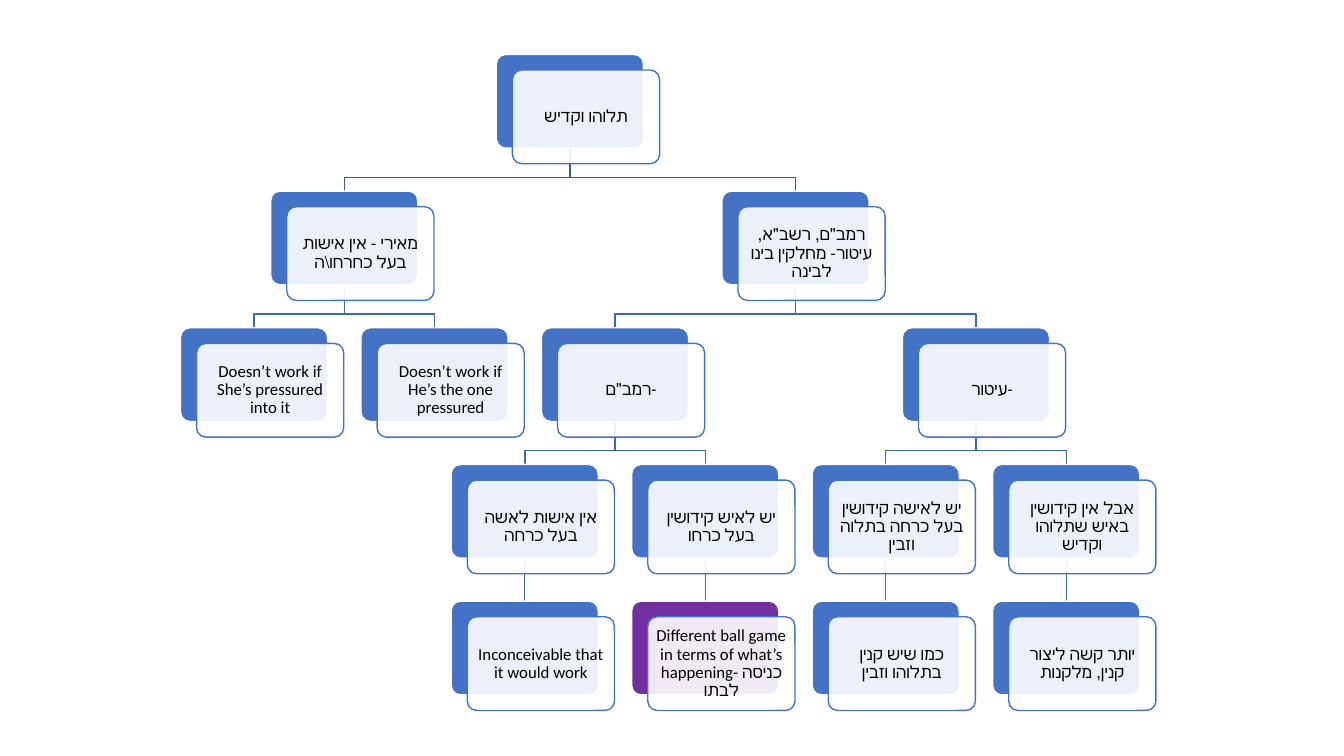
from dataclasses import dataclass

from lxml import etree
from pptx import Presentation
from pptx.dml.color import RGBColor
from pptx.enum.shapes import MSO_CONNECTOR, MSO_SHAPE
from pptx.enum.text import MSO_ANCHOR, PP_ALIGN
from pptx.oxml.ns import qn
from pptx.util import Inches, Pt

ROUNDED = MSO_SHAPE.ROUNDED_RECTANGLE
STRAIGHT = MSO_CONNECTOR.STRAIGHT
MIDDLE = MSO_ANCHOR.MIDDLE
CENTER = PP_ALIGN.CENTER
BOTTOM_SIDE, TOP_SIDE = 2, 0

BLUE, PURPLE, WHITE, BLACK = "4472C4", "7030A0", "FFFFFF", "000000"
ROOT_BRANCH, BRANCH = "365B9D", "3E67B2"
CARD_W, CARD_H = 1.46, 0.93
SLOT_STEP, LEVEL_STEP = 0.895, 1.356
FRONT_DX, FRONT_DY = 0.16, 0.155
ELBOW_DROP = 0.29
TREE_LEFT, TREE_TOP = 1.79, 0.54


@dataclass
class Opinion:
    """One card of the tree: its wording, column slot, replies and back colour."""
    wording: str
    slot: float
    replies: tuple = ()
    color: str = BLUE


MEIRI = Opinion("מאירי - אין אישות בעל כחרחו\\ה", 1, (
    Opinion("Doesn’t work if She’s pressured into it", 0),
    Opinion("Doesn’t work if He’s the one pressured", 2),
))
RAMBAM = Opinion('רמב"ם-', 4, (
    Opinion("אין אישות לאשה בעל כרחה", 3, (
        Opinion("Inconceivable that it would work", 3),)),
    Opinion("יש לאיש קידושין בעל כרחו", 5, (
        Opinion("Different ball game in terms of what’s happening- כניסה לבתו", 5,
                color=PURPLE),)),
))
ITUR = Opinion("עיטור-", 8, (
    Opinion("יש לאישה קידושין בעל כרחה בתלוה וזבין", 7, (
        Opinion("כמו שיש קנין בתלוהו וזבין", 7),)),
    Opinion("אבל אין קידושין באיש שתלוהו וקדיש", 9, (
        Opinion("יותר קשה ליצור קנין, מלקנות", 9),)),
))
DISTINCTION = Opinion('רמב"ם, רשב"א, עיטור- מחלקין בינו לבינה', 6, (RAMBAM, ITUR))
TOPIC = Opinion("תלוהו וקדיש", 3.5, (MEIRI, DISTINCTION))


def rgb(hex_color):
    """Turn a hex string into a colour."""
    return RGBColor.from_string(hex_color)


def set_line(line, hex_color):
    """Give a line its colour and the common width."""
    line.color.rgb = rgb(hex_color)
    line.width = Pt(1)


def add_panel(slide, left, top, fill, outline):
    """Draw one rounded panel of a card."""
    panel = slide.shapes.add_shape(
        ROUNDED, Inches(left), Inches(top), Inches(CARD_W), Inches(CARD_H))
    panel.adjustments[0] = 0.1
    panel.shadow.inherit = False
    panel.fill.solid()
    panel.fill.fore_color.rgb = rgb(fill)
    set_line(panel.line, outline)
    return panel


def write_wording(panel, wording):
    """Set the centred wording of a front panel."""
    frame = panel.text_frame
    frame.text = wording
    frame.word_wrap = True
    frame.vertical_anchor = MIDDLE
    frame.margin_left = frame.margin_right = Inches(0.05)
    frame.margin_top = frame.margin_bottom = Inches(0.05)
    paragraph = frame.paragraphs[0]
    paragraph.alignment = CENTER
    paragraph.line_spacing = 0.9
    font = paragraph.runs[0].font
    font.name = "Calibri"
    font.size = Pt(12)
    font.color.rgb = rgb(BLACK)


def add_card(slide, opinion, left, top):
    """Draw a card as a coloured back and a translucent front; return the back."""
    back = add_panel(slide, left, top, opinion.color, WHITE)
    front = add_panel(slide, left + FRONT_DX, top + FRONT_DY, WHITE, BLUE)
    front_color = front.fill._xPr.find(qn("a:solidFill"))[0]
    etree.SubElement(front_color, qn("a:alpha"), val="90000")
    write_wording(front, opinion.wording)
    return back


def add_elbow(slide, start, end, color):
    """Draw a bent branch between two points."""
    (start_x, start_y), (end_x, end_y) = start, end
    bend_y = start_y + ELBOW_DROP
    builder = slide.shapes.build_freeform(Inches(start_x), Inches(start_y))
    corners = [(start_x, bend_y), (end_x, bend_y), (end_x, end_y)]
    builder.add_line_segments([(Inches(x), Inches(y)) for x, y in corners], close=False)
    elbow = builder.convert_to_shape()
    elbow.shadow.inherit = False
    elbow.fill.background()
    set_line(elbow.line, color)


def add_stem(slide, start, end, color):
    """Draw a straight branch between two points."""
    stem = slide.shapes.add_connector(STRAIGHT, *map(Inches, start + end))
    set_line(stem.line, color)
    etree.SubElement(stem._element.spPr, qn("a:effectLst"))
    return stem


def walk(opinion, level=0):
    """Yield every opinion with its level, parents first."""
    yield opinion, level
    for reply in opinion.replies:
        yield from walk(reply, level + 1)


def add_tree(slide, topic, left, top):
    """Place the whole tree, branches behind cards, from its top left corner."""
    def corner(opinion, level):
        return left + opinion.slot * SLOT_STEP, top + level * LEVEL_STEP

    stems = []
    for opinion, level in walk(topic):
        x, y = corner(opinion, level)
        start = (x + CARD_W / 2, y + CARD_H)
        color = BRANCH if level else ROOT_BRANCH
        for reply in opinion.replies:
            reply_x, reply_y = corner(reply, level + 1)
            end = (reply_x + CARD_W / 2, reply_y)
            if reply.slot == opinion.slot:
                stems.append((add_stem(slide, start, end, color), opinion, reply))
            else:
                add_elbow(slide, start, end, color)

    backs = {opinion.wording: add_card(slide, opinion, *corner(opinion, level))
             for opinion, level in walk(topic)}
    for stem, opinion, reply in stems:
        stem.begin_connect(backs[opinion.wording], BOTTOM_SIDE)
        stem.end_connect(backs[reply.wording], TOP_SIDE)


def main():
    """Build the slide and save it."""
    deck = Presentation()
    deck.slide_width, deck.slide_height = Inches(13.33), Inches(7.5)
    slide = deck.slides.add_slide(deck.slide_layouts[6])
    add_tree(slide, TOPIC, TREE_LEFT, TREE_TOP)
    deck.save("out.pptx")


if __name__ == "__main__":
    main()
